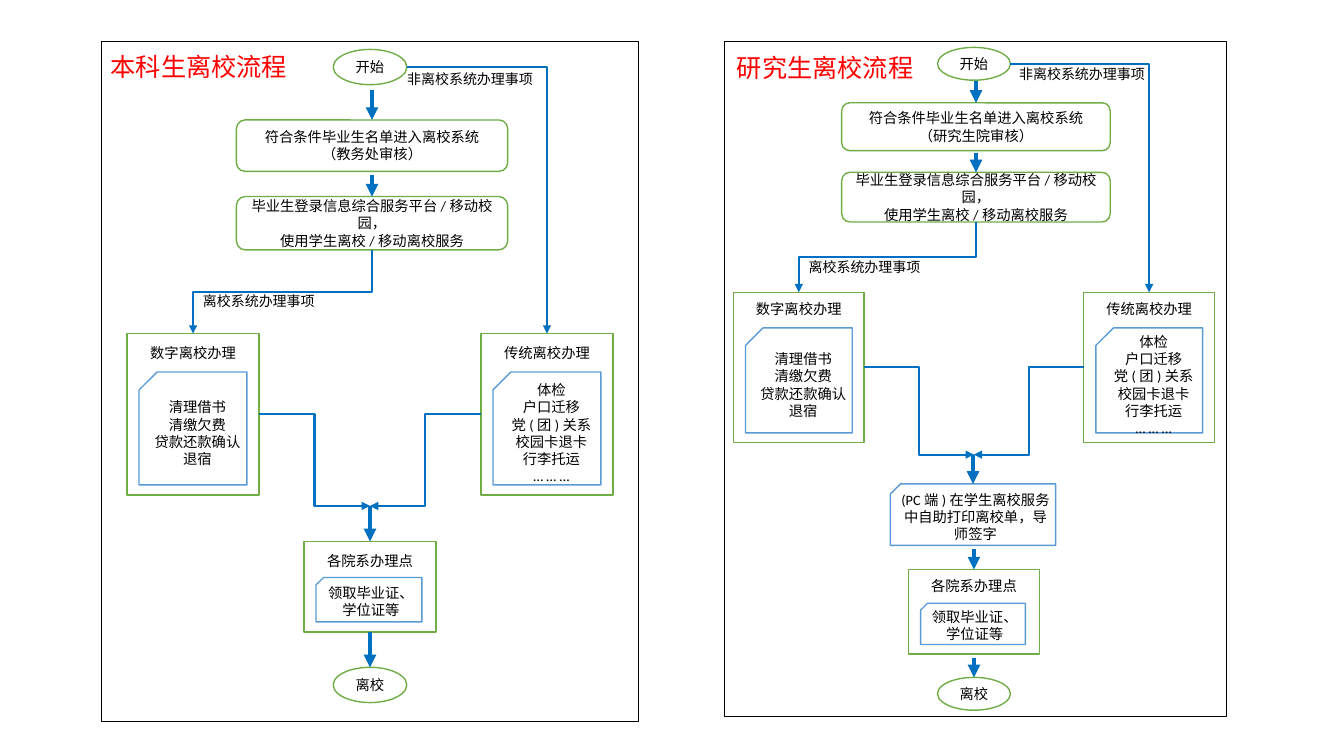
"""Draw the leaving-school flowcharts for undergraduates and postgraduates."""
from dataclasses import dataclass

from lxml import etree
from pptx import Presentation
from pptx import util as u
from pptx.dml.color import RGBColor
from pptx.enum import shapes, text
from pptx.oxml.ns import qn

BLACK = RGBColor(0x00, 0x00, 0x00)
WHITE = RGBColor(0xFF, 0xFF, 0xFF)
RED = RGBColor(0xFF, 0x00, 0x00)
GREEN = RGBColor(0x70, 0xAD, 0x47)
SKY = RGBColor(0x5B, 0x9B, 0xD5)
BLUE = RGBColor(0x00, 0x70, 0xC0)

RECT = shapes.MSO_SHAPE.RECTANGLE
ROUND = shapes.MSO_SHAPE.ROUNDED_RECTANGLE
OVAL = shapes.MSO_SHAPE.OVAL
SNIP = shapes.MSO_SHAPE.SNIP_1_RECTANGLE
STRAIGHT = shapes.MSO_CONNECTOR.STRAIGHT
ELBOW = shapes.MSO_CONNECTOR.ELBOW
TOP, BOTTOM = 0, 2


@dataclass
class Panel:
    frame: tuple
    heading: str
    heading_at: tuple
    reviewer: str
    axis: float
    scale: tuple
    start: float
    conditions: float
    platform: float
    cards: float
    merge: float
    office: float
    leave: float
    gaps: tuple
    caption_inset: float
    outside_label_at: tuple
    printing: tuple = ()


class Flowchart:
    font = "Calibri"
    body_size = u.Pt(10.2)

    def __init__(self, slide):
        self.shapes = slide.shapes

    def set_words(self, frame, words, size, color, align):
        frame.word_wrap = True
        frame.text = words
        for paragraph in frame.paragraphs:
            paragraph.alignment = align
            paragraph.font.name = self.font
            paragraph.font.size = size
            paragraph.font.color.rgb = color

    def box(self, kind, area, line, words="", weight=1, caption_inset=None):
        shape = self.shapes.add_shape(kind, *map(u.Inches, area))
        shape.shadow.inherit = False
        shape.fill.solid()
        shape.fill.fore_color.rgb = WHITE
        shape.line.color.rgb = line
        shape.line.width = u.Pt(weight)
        if kind == SNIP:
            shape.element.spPr.find(qn("a:xfrm")).set("flipH", "1")
        if words:
            frame = shape.text_frame
            frame.margin_left = frame.margin_right = u.Inches(0.06)
            frame.margin_top = frame.margin_bottom = u.Inches(0.03)
            frame.vertical_anchor = text.MSO_ANCHOR.MIDDLE
            if caption_inset is not None:
                frame.vertical_anchor = text.MSO_ANCHOR.TOP
                frame.margin_top = u.Inches(caption_inset)
            self.set_words(frame, words, self.body_size, BLACK, text.PP_ALIGN.CENTER)
        return shape

    def label(self, area, words, size=10, color=BLACK):
        caption = self.shapes.add_textbox(*map(u.Inches, area))
        self.set_words(caption.text_frame, words, u.Pt(size), color, text.PP_ALIGN.LEFT)

    def link(self, begin, end, kind=ELBOW, weight=1.5):
        link = self.shapes.add_connector(kind, *map(int, (*begin, *end)))
        link.line.color.rgb = BLUE
        link.line.width = u.Pt(weight)
        properties = link.element.spPr
        etree.SubElement(properties.find(qn("a:ln")), qn("a:tailEnd"), type="triangle")
        etree.SubElement(properties, qn("a:effectLst"))
        return link

    def corner(self, begin, end):
        link = self.link(begin, end)
        link.element.spPr.find(qn("a:prstGeom")).set("prst", "bentConnector2")

    def step_down_left(self, begin, end):
        link = self.link(begin, end)
        across, down = begin[0] - end[0], end[1] - begin[1]
        link.left = int((begin[0] + end[0] - down) / 2)
        link.top = int((begin[1] + end[1] - across) / 2)
        link.width, link.height = int(down), int(across)
        turn = link.element.spPr.find(qn("a:xfrm"))
        turn.attrib.pop("flipH", None)
        turn.set("rot", "5400000")

    def drop(self, target, start_y):
        x = target.left + target.width / 2
        arrow = self.link((x, start_y), (x, target.top), STRAIGHT, 3)
        arrow.end_connect(target, TOP)
        return arrow

    def descend(self, source, target, gap):
        arrow = self.drop(target, source.top + source.height + u.Inches(gap))
        if gap == 0:
            arrow.begin_connect(source, BOTTOM)

    def card(self, center, top, scale, size, inner, title, items, inset):
        sx, sy = scale
        width, height = size[0] * sx, size[1] * sy
        left = center - width / 2
        outer = self.box(RECT, (left, top, width, height), GREEN, title,
                         caption_inset=inset)
        dy, inner_width, inner_height = inner
        self.box(SNIP, (left + 0.12, top + dy * sy, inner_width * sx,
                        inner_height * sy), SKY, items)
        return outer

    def panel(self, p):
        sx, sy = p.scale

        def step(kind, top, width, height, words, shift=0):
            width *= sx
            return self.box(kind, (p.axis + shift - width / 2, top, width, height * sy),
                            GREEN, words)

        def side_card(side, title, items):
            return self.card(p.axis + side * 1.755 * sx, p.cards, p.scale, (1.31, 1.6),
                             (0.38, 1.07, 1.12), title, items, p.caption_inset)

        self.box(RECT, p.frame, BLACK, weight=0.5)
        start = step(OVAL, p.start, 0.73, 0.35, "开始")
        conditions = step(ROUND, p.conditions, 2.69, 0.51,
                          f"符合条件毕业生名单进入离校系统\n（{p.reviewer}审核）", 0.02)
        platform = step(ROUND, p.platform, 2.69, 0.53,
                        "毕业生登录信息综合服务平台/移动校园，\n使用学生离校/移动离校服务", 0.02)
        digital = side_card(-1, "数字离校办理", "清理借书\n清缴欠费\n贷款还款确认\n退宿")
        traditional = side_card(1, "传统离校办理",
                                "体检\n户口迁移\n党(团)关系\n校园卡退卡\n行李托运\n… … …")
        office = self.card(p.axis, p.office, p.scale, (1.31, 0.9), (0.36, 1.05, 0.44),
                           "各院系办理点", "领取毕业证、\n学位证等", p.caption_inset)
        leave = step(OVAL, p.leave, 0.73, 0.35, "离校")

        start_gap, conditions_gap, office_gap = p.gaps
        self.descend(start, conditions, start_gap)
        self.descend(conditions, platform, conditions_gap)
        self.descend(office, leave, office_gap)
        after_merge = office
        if p.printing:
            after_merge = self.box(SNIP, p.printing, SKY,
                                   "(PC端)在学生离校服务中自助打印离校单，导师签字")
            self.descend(after_merge, office, 0.04)
        merge = u.Inches(p.axis), u.Inches(p.merge)
        self.drop(after_merge, merge[1])

        middle = digital.top + digital.height / 2
        digital_x = digital.left + digital.width / 2
        self.link((digital.left + digital.width, middle), merge)
        self.link((traditional.left, middle), merge)
        platform_bottom = platform.top + platform.height
        self.step_down_left((platform.left + platform.width / 2, platform_bottom),
                            (digital_x, digital.top))
        self.corner((start.left + start.width, start.top + start.height / 2),
                    (traditional.left + traditional.width / 2, traditional.top))
        label_y = (platform_bottom + digital.top) / 2 / u.Inches(1) - 0.04
        self.label((digital_x / u.Inches(1), label_y, 1.5, 0.27), "离校系统办理事项")
        self.label((*p.outside_label_at, 1.55, 0.27), "非离校系统办理事项")
        self.label((*p.heading_at, 2.18, 0.4), p.heading, 18, RED)


PANELS = (
    Panel(frame=(1.01, 0.41, 5.32, 6.75), heading="本科生离校流程", heading_at=(1, 0.46),
          reviewer="教务处", axis=3.67, scale=(1, 1), start=0.49, conditions=1.19,
          platform=1.95, cards=3.31, merge=5.02, office=5.37, leave=6.62,
          gaps=(0.05, 0.04, 0), caption_inset=0.11, outside_label_at=(3.94, 0.65)),
    Panel(frame=(7.18, 0.41, 4.98, 6.7), heading="研究生离校流程", heading_at=(7.21, 0.47),
          reviewer="研究生院", axis=9.66, scale=(0.99, 0.93), start=0.47, conditions=1.02,
          platform=1.71, cards=2.9, merge=4.51, office=5.65, leave=6.72,
          gaps=(0.01, 0.02, 0.04), caption_inset=0.08, outside_label_at=(10.01, 0.6),
          printing=(8.83, 4.8, 1.64, 0.61)),
)


def main():
    deck = Presentation()
    deck.slide_width, deck.slide_height = u.Inches(13.33), u.Inches(7.5)
    chart = Flowchart(deck.slides.add_slide(deck.slide_layouts[6]))
    for panel in PANELS:
        chart.panel(panel)
    deck.save("out.pptx")


if __name__ == "__main__":
    main()
